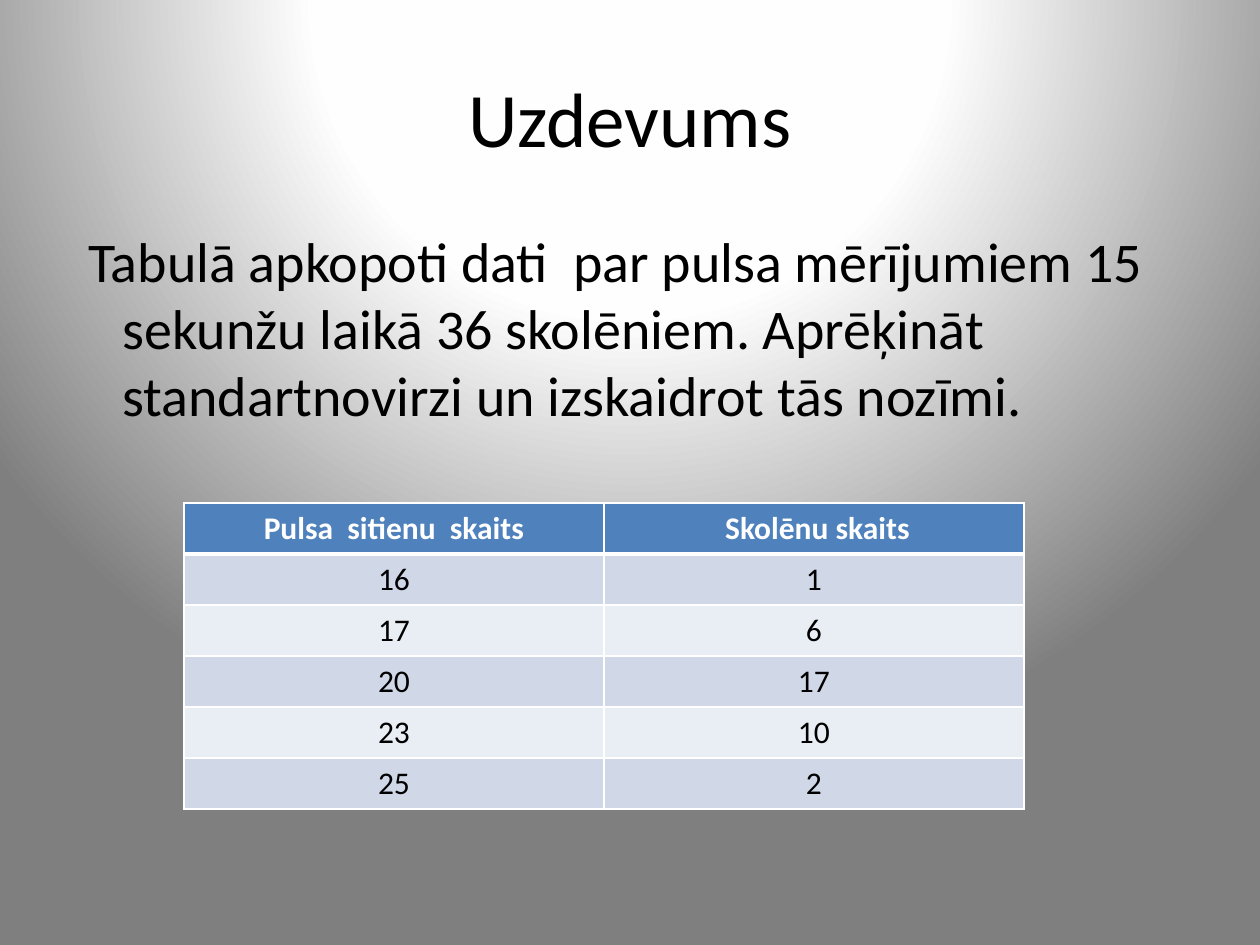
from lxml import etree
from pptx import Presentation
from pptx.dml.color import RGBColor
from pptx.enum.text import MSO_ANCHOR, PP_ALIGN
from pptx.oxml import parse_xml
from pptx.oxml.ns import qn
from pptx.util import Pt

PX = 914400 // 126
FONT = "Calibri"
BLACK = RGBColor(0x00, 0x00, 0x00)
WHITE = RGBColor(0xFF, 0xFF, 0xFF)
BLUE = RGBColor(0x4F, 0x81, 0xBD)
BANDS = [RGBColor(0xD0, 0xD8, 0xE8), RGBColor(0xE9, 0xED, 0xF4)]
STOPS = [(0, WHITE), (40, RGBColor(0xFE, 0xFE, 0xFE)),
         (100, RGBColor(0x7F, 0x7F, 0x7F))]
FOCUS = {"l": 50, "t": -80, "r": 50, "b": 180}

TITLE = "Uzdevums"
TASK = (" Tabulā apkopoti dati  par pulsa mērījumiem 15 sekunžu laikā "
        "36 skolēniem. Aprēķināt standartnovirzi un izskaidrot tās nozīmi.")
ROWS = [
    ("Pulsa  sitienu  skaits", " Skolēnu skaits"),
    ("16", "1"),
    ("17", "6"),
    ("20", "17"),
    ("23", "10"),
    ("25", "2"),
]
LEFT, TOP, COL, ROW = 184, 503, 420, 51


def px(*nums):
    return [n * PX for n in nums]


def write(para, text, size, color=BLACK, bold=False):
    run = para.add_run()
    run.text = text
    font = run.font
    font.name, font.size, font.bold = FONT, Pt(size), bold
    font.color.rgb = color


def add_text(slide, box, text, size, anchor):
    frame = slide.shapes.add_textbox(*px(*box)).text_frame
    frame.word_wrap = True
    frame.vertical_anchor = anchor
    para = frame.paragraphs[0]
    write(para, text, size)
    return para


def paint_back(slide):
    fill = slide.background.fill
    fill.gradient()
    stops = "".join(
        f'<a:gs pos="{pos * 1000}"><a:srgbClr val="{color}"/></a:gs>'
        for pos, color in STOPS)
    focus = " ".join(f'{side}="{n * 1000}"' for side, n in FOCUS.items())
    grad = parse_xml(
        '<a:gradFill xmlns:a="http://schemas.openxmlformats.org/drawingml/2006/main"'
        f' rotWithShape="1"><a:gsLst>{stops}</a:gsLst>'
        f'<a:path path="circle"><a:fillToRect {focus}/></a:path></a:gradFill>')
    old = next(slide.background._cSld.iter(qn("a:gradFill")))
    old.getparent().replace(old, grad)


def add_edge(props, side, width):
    line = etree.Element(qn(f"a:ln{side}"), w=str(Pt(width)))
    fill = etree.SubElement(line, qn("a:solidFill"))
    etree.SubElement(fill, qn("a:srgbClr"), val=str(WHITE))
    props.append(line)


def fill_cell(cell, text, row):
    head = row == 0
    props = cell._tc.get_or_add_tcPr()
    for side in "LRTB":
        thick = (head and side == "B") or (row == 1 and side == "T")
        add_edge(props, side, 3 if thick else 1)
    cell.fill.solid()
    cell.fill.fore_color.rgb = BLUE if head else BANDS[(row - 1) % 2]
    para = cell.text_frame.paragraphs[0]
    para.alignment = PP_ALIGN.CENTER
    write(para, text, 18, WHITE if head else BLACK, head)


def add_grid(slide):
    high, wide = len(ROWS), len(ROWS[0])
    box = px(LEFT, TOP, COL * wide, ROW * high)
    table = slide.shapes.add_table(high, wide, *box).table
    for r, texts in enumerate(ROWS):
        for c, text in enumerate(texts):
            fill_cell(table.cell(r, c), text, r)


def main():
    deck = Presentation()
    deck.slide_width, deck.slide_height = px(1260, 945)
    slide = deck.slides.add_slide(deck.slide_layouts[6])
    paint_back(slide)
    title = add_text(slide, (63, 38, 1134, 157), TITLE, 44, MSO_ANCHOR.MIDDLE)
    title.alignment = PP_ALIGN.CENTER
    task = add_text(slide, (63, 220, 1134, 624), TASK, 32, MSO_ANCHOR.TOP)
    task.space_before = Pt(6.4)
    props = task._p.get_or_add_pPr()
    props.set("marL", str(47 * PX))
    props.set("indent", str(-47 * PX))
    add_grid(slide)
    deck.save("out.pptx")


if __name__ == "__main__":
    main()
